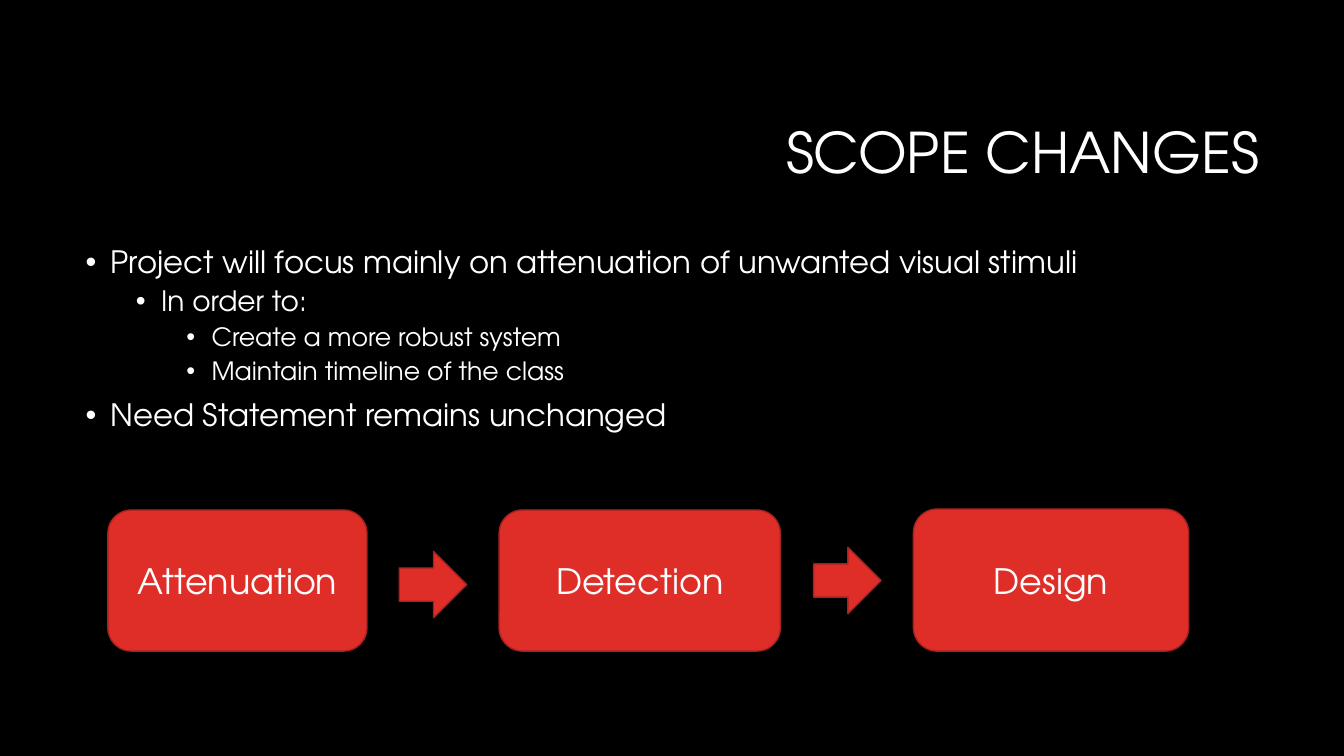
from dataclasses import dataclass

from lxml.etree import SubElement
from pptx import Presentation
from pptx.dml.color import RGBColor
from pptx.enum.shapes import MSO_SHAPE as Shape
from pptx.enum.text import MSO_ANCHOR as Anchor, PP_ALIGN as Align
from pptx.oxml.ns import qn
from pptx.util import Inches, Pt


@dataclass(frozen=True)
class Theme:
    font: str = "TeX Gyre Adventor"
    background: RGBColor = RGBColor(0x00, 0x00, 0x00)
    text: RGBColor = RGBColor(0xFF, 0xFF, 0xFF)
    accent: RGBColor = RGBColor(0xDF, 0x2E, 0x28)
    outline: RGBColor = RGBColor(0xA5, 0x22, 0x1E)
    title_size: int = 40
    stage_size: int = 25
    level_sizes: tuple = (22, 20, 18)
    level_gaps: tuple = (10, 5, 5)


THEME = Theme()

SCOPE_POINTS = [
    (0, "Project will focus mainly on attenuation of unwanted visual stimuli"),
    (1, "In order to:"),
    (2, "Create a more robust system"),
    (2, "Maintain timeline of the class"),
    (0, "Need Statement remains unchanged"),
]

# Places inside the process box: left, top, width, height
STAGES = [
    ("Attenuation", (0, 0.01, 2.57, 1.4)),
    ("Detection", (3.88, 0.01, 2.79, 1.4)),
    ("Design", (7.99, 0, 2.73, 1.41)),
]
ARROWS = [(2.89, 0.42, 0.67, 0.66), (7, 0.38, 0.67, 0.66)]


def add_run(paragraph, text, size):
    run = paragraph.add_run()
    run.text = text
    run.font.name = THEME.font
    run.font.size = Pt(size)
    run.font.color.rgb = THEME.text


def add_title(slide, box, text):
    title = slide.shapes.title
    title.left, title.top, title.width, title.height = map(Inches, box)
    title.text_frame.vertical_anchor = Anchor.MIDDLE
    heading = title.text_frame.paragraphs[0]
    heading.alignment = Align.RIGHT
    heading.line_spacing = 0.9
    add_run(heading, text, THEME.title_size)


def set_bullet(paragraph, level):
    properties = paragraph._p.get_or_add_pPr()
    properties.set("marL", str(Inches(0.25 + 0.5 * level)))
    properties.set("indent", str(Inches(-0.25)))
    SubElement(properties, qn("a:buFont"), typeface="Arial")
    SubElement(properties, qn("a:buChar"), char="•")


def add_points(slide, box, points):
    frame = slide.shapes.add_textbox(*map(Inches, box)).text_frame
    frame.word_wrap = True
    for index, (level, text) in enumerate(points):
        point = frame.add_paragraph() if index else frame.paragraphs[0]
        set_bullet(point, level)
        point.level = level
        point.line_spacing = 0.9
        if index:
            point.space_before = Pt(THEME.level_gaps[level])
        add_run(point, text, THEME.level_sizes[level])


def add_block(slide, kind, origin, place):
    left, top, width, height = place
    block = slide.shapes.add_shape(
        kind, Inches(origin[0] + left), Inches(origin[1] + top),
        Inches(width), Inches(height))
    block.shadow.inherit = False
    block.fill.solid()
    block.fill.fore_color.rgb = THEME.accent
    block.line.color.rgb = THEME.outline
    block.line.width = Pt(1)
    return block


def add_process(slide, origin):
    # Stages
    for name, place in STAGES:
        stage = add_block(slide, Shape.ROUNDED_RECTANGLE, origin, place)
        stage.text_frame.vertical_anchor = Anchor.MIDDLE
        label = stage.text_frame.paragraphs[0]
        label.alignment = Align.CENTER
        add_run(label, name, THEME.stage_size)
    # Arrows between the stages
    for place in ARROWS:
        add_block(slide, Shape.RIGHT_ARROW, origin, place)


def main():
    deck = Presentation()
    deck.slide_width, deck.slide_height = Inches(13.33), Inches(7.5)
    slide = deck.slides.add_slide(deck.slide_layouts.get_by_name("Title Only"))
    slide.background.fill.solid()
    slide.background.fill.fore_color.rgb = THEME.background

    add_title(slide, (3.17, 0.84, 9.42, 1.41), "SCOPE CHANGES")
    add_points(slide, (0.75, 2.4, 11.83, 4.4), SCOPE_POINTS)
    add_process(slide, (1.07, 5.05))
    deck.save("out.pptx")


if __name__ == "__main__":
    main()
